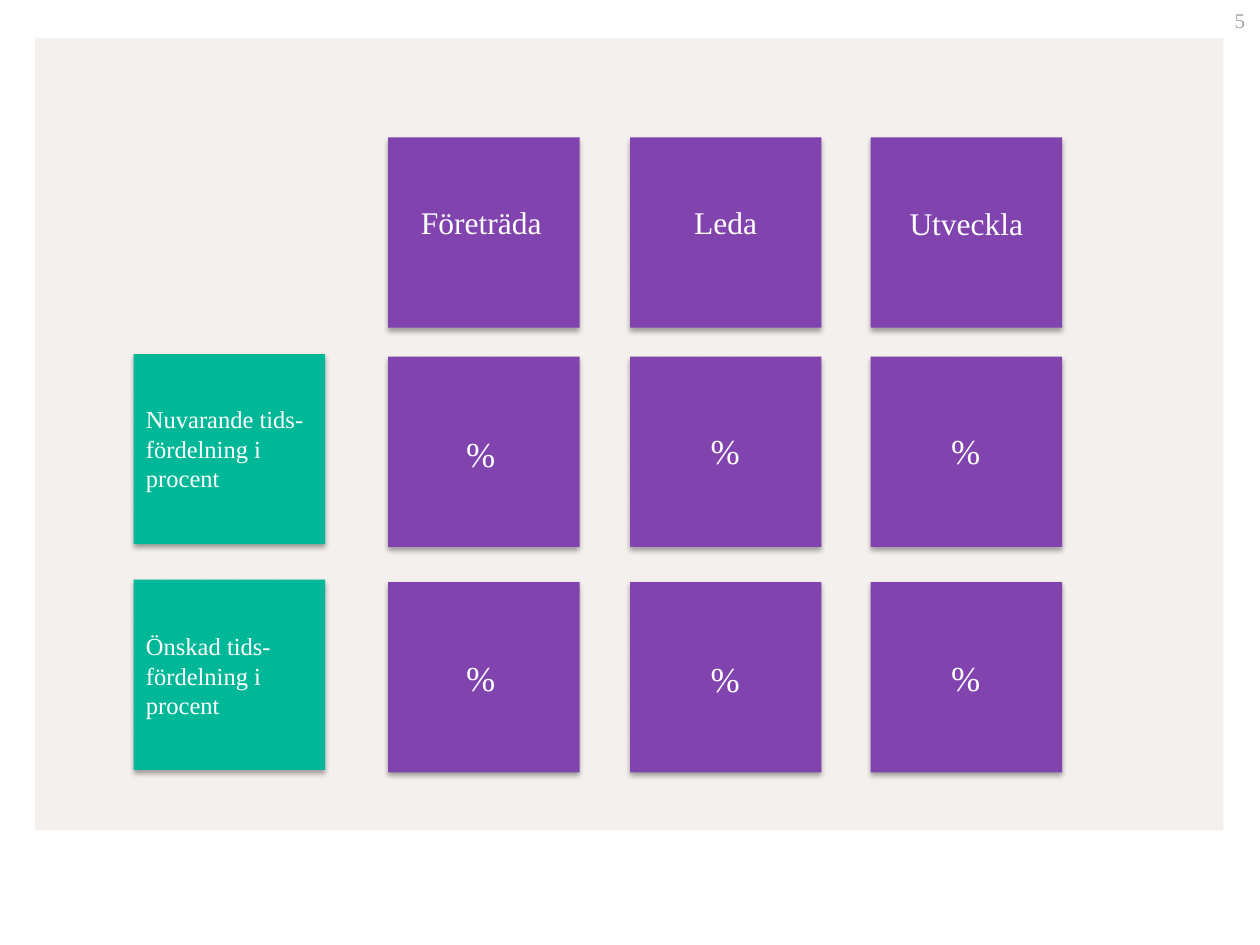
from lxml import etree
from pptx import Presentation
from pptx import util as u
from pptx.dml.color import RGBColor
from pptx.enum import shapes, text
from pptx.oxml.ns import qn

COLORS = {
    "panel": "F4F0EE",
    "label": "00B897",
    "tile": "8144AE",
    "white": "FFFFFF",
    "number": "A6A6A6",
    "shadow": "000000",
}
FONT = "Times New Roman"

# The page is a grid of 100 columns by 75 rows
GRID_COLUMNS, GRID_ROWS = 100, 75
TILE_SIZE = (15.2, 15.1)
TILE_LEFTS = (30.8, 50, 69.1)
TILE_TOPS = (10.9, 28.3, 46.2)
LABEL_LEFT = 10.6

# Heading and the offset of its text box from the tile
HEADINGS = (("Företräda", 0.9, 15.6), ("Leda", 1.1, 15.6), ("Utveckla", 1.1, 15.7))
PERCENT_LEFTS = (34.1, 53.5, 72.6)
PERCENT_TOPS = ((33.8, 33.6, 33.6), (51.6, 51.7, 51.6))
LABELS = (
    ("Nuvarande tids-fördelning i procent", 28.1, 31.6),
    ("Önskad tids-fördelning i procent", 46, 49.6),
)


class SlideBuilder:
    def __init__(self, deck):
        self.deck = deck
        self.page = deck.slides.add_slide(deck.slide_layouts[6])

    def place(self, left, top, width, height):
        column = self.deck.slide_width / GRID_COLUMNS
        row = self.deck.slide_height / GRID_ROWS
        return [round(n) for n in (left * column, top * row, width * column, height * row)]

    def rectangle(self, left, top, width, height, color):
        box = self.page.shapes.add_shape(
            shapes.MSO_SHAPE.RECTANGLE, *self.place(left, top, width, height))
        box.shadow.inherit = False
        box.fill.solid()
        box.fill.fore_color.rgb = RGBColor.from_string(COLORS[color])
        box.line.fill.background()
        return box

    def tile(self, left, top, color):
        box = self.rectangle(left, top, *TILE_SIZE, color)
        effects = box._element.spPr.find(qn("a:effectLst"))
        shadow = etree.SubElement(
            effects, qn("a:outerShdw"), blurRad=str(u.Pt(3.1)), dist=str(u.Pt(1.8)),
            dir="5400000", algn="ctr", rotWithShape="0")
        tint = etree.SubElement(shadow, qn("a:srgbClr"), val=COLORS["shadow"])
        etree.SubElement(tint, qn("a:alpha"), val="35000")

    def text(self, words, left, top, width, height, size,
             align=text.PP_ALIGN.CENTER, color="white"):
        box = self.page.shapes.add_textbox(*self.place(left, top, width, height))
        frame = box.text_frame
        frame.word_wrap = True
        frame.text = words
        para = frame.paragraphs[0]
        para.alignment = align
        span = para.runs[0]
        span.font.name = FONT
        span.font.size = u.Pt(size)
        span.font.color.rgb = RGBColor.from_string(COLORS[color])


def main():
    deck = Presentation()
    deck.slide_width, deck.slide_height = u.Inches(10), u.Inches(7.5)
    slide = SlideBuilder(deck)

    # Background panel and page number
    slide.rectangle(2.8, 3, 94.3, 62.9, "panel")
    slide.text("5", 92.6, 0.1, 7.2, 4, 12, text.PP_ALIGN.RIGHT, "number")

    # Tiles: one heading row and two rows of shares
    for top in TILE_TOPS:
        for left in TILE_LEFTS:
            slide.tile(left, top, "tile")

    # Column headings
    for left, (words, inset, top) in zip(TILE_LEFTS, HEADINGS):
        slide.text(words, left + inset, top, 13, 4, 18)

    # Row labels
    for words, tile_top, text_top in LABELS:
        slide.tile(LABEL_LEFT, tile_top, "label")
        slide.text(words, LABEL_LEFT, text_top, TILE_SIZE[0], 8.1, 14, text.PP_ALIGN.LEFT)

    # Percent signs
    for tops in PERCENT_TOPS:
        for left, top in zip(PERCENT_LEFTS, tops):
            slide.text("%", left, top, 8.1, 4.4, 20)

    deck.save("out.pptx")


if __name__ == "__main__":
    main()
